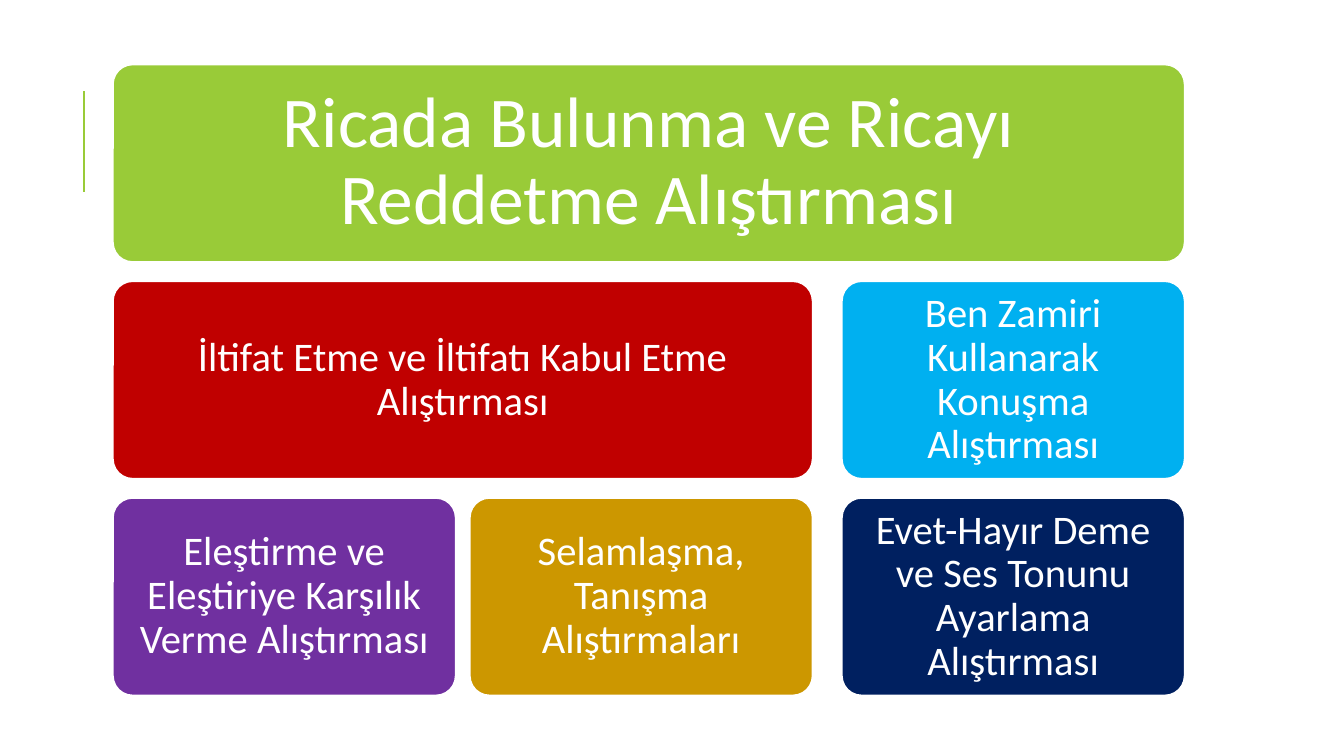
import pptx
import pptx.util
import pptx.dml.color
import pptx.enum.shapes
import pptx.enum.text
import pptx.oxml

SLIDE_SIZE = (13.33, 7.5)
FONT = "Calibri"
WHITE = "FFFFFF"
ACCENT = "99CB38"

# text, row, first column, last column, fill, font size, inset
EXERCISES = [
    ("Ricada Bulunma ve Ricayı Reddetme Alıştırması", 0, 0, 2, ACCENT, 51, 0.21),
    ("İltifat Etme ve İltifatı Kabul Etme Alıştırması", 1, 0, 1, "C00000", 29, 0.12),
    ("Eleştirme ve Eleştiriye Karşılık Verme Alıştırması", 2, 0, 0, "7030A0", 29, 0.12),
    ("Selamlaşma, Tanışma Alıştırmaları", 2, 1, 1, "CC9700", 29, 0.12),
    ("Ben Zamiri Kullanarak Konuşma Alıştırması", 1, 2, 2, "00B0F0", 29, 0.12),
    ("Evet-Hayır Deme ve Ses Tonunu Ayarlama Alıştırması", 2, 2, 2, "002060", 29, 0.12),
]

COLUMN_LEFTS = (1.12, 4.66, 8.35)
COLUMN_WIDTH = 3.4
FIRST_ROW_TOP = 0.64
ROW_HEIGHT = 1.96
ROW_GAP = 0.19
ACCENT_LINE = (0.83, 1.9, 0.83, 0.9)


def inches(*lengths):
    return [pptx.util.Inches(length) for length in lengths]


def color(hex_string):
    return pptx.dml.color.RGBColor.from_string(hex_string)


def add_accent_line(slide):
    accent = slide.shapes.add_connector(
        pptx.enum.shapes.MSO_CONNECTOR.STRAIGHT, *inches(*ACCENT_LINE))
    accent.line.color.rgb = color(ACCENT)
    accent.line.width = pptx.util.Pt(1.5)
    accent._element.spPr.append(pptx.oxml.parse_xml(
        '<a:effectLst xmlns:a="http://schemas.openxmlformats.org/drawingml/2006/main"/>'))


def add_exercise(slide, text, row, first, last, fill, size, inset):
    left = COLUMN_LEFTS[first]
    width = COLUMN_LEFTS[last] + COLUMN_WIDTH - left
    top = FIRST_ROW_TOP + row * (ROW_HEIGHT + ROW_GAP)
    card = slide.shapes.add_shape(
        pptx.enum.shapes.MSO_SHAPE.ROUNDED_RECTANGLE,
        *inches(left, top, width, ROW_HEIGHT))
    card.adjustments[0] = 0.1
    card.shadow.inherit = False
    card.fill.solid()
    card.fill.fore_color.rgb = color(fill)
    card.line.color.rgb = color(WHITE)
    card.line.width = pptx.util.Pt(1.25)

    frame = card.text_frame
    frame.text = text
    frame.word_wrap = True
    frame.vertical_anchor = pptx.enum.text.MSO_ANCHOR.MIDDLE
    frame.margin_left, frame.margin_top, frame.margin_right, frame.margin_bottom = inches(*[inset] * 4)
    paragraph = frame.paragraphs[0]
    paragraph.alignment = pptx.enum.text.PP_ALIGN.CENTER
    paragraph.line_spacing = 0.9
    font = paragraph.runs[0].font
    font.name = FONT
    font.size = pptx.util.Pt(size)
    font.color.rgb = color(WHITE)


def main():
    deck = pptx.Presentation()
    deck.slide_width, deck.slide_height = inches(*SLIDE_SIZE)
    slide = deck.slides.add_slide(deck.slide_layouts[6])
    add_accent_line(slide)
    for exercise in EXERCISES:
        add_exercise(slide, *exercise)
    deck.save("out.pptx")


if __name__ == "__main__":
    main()
